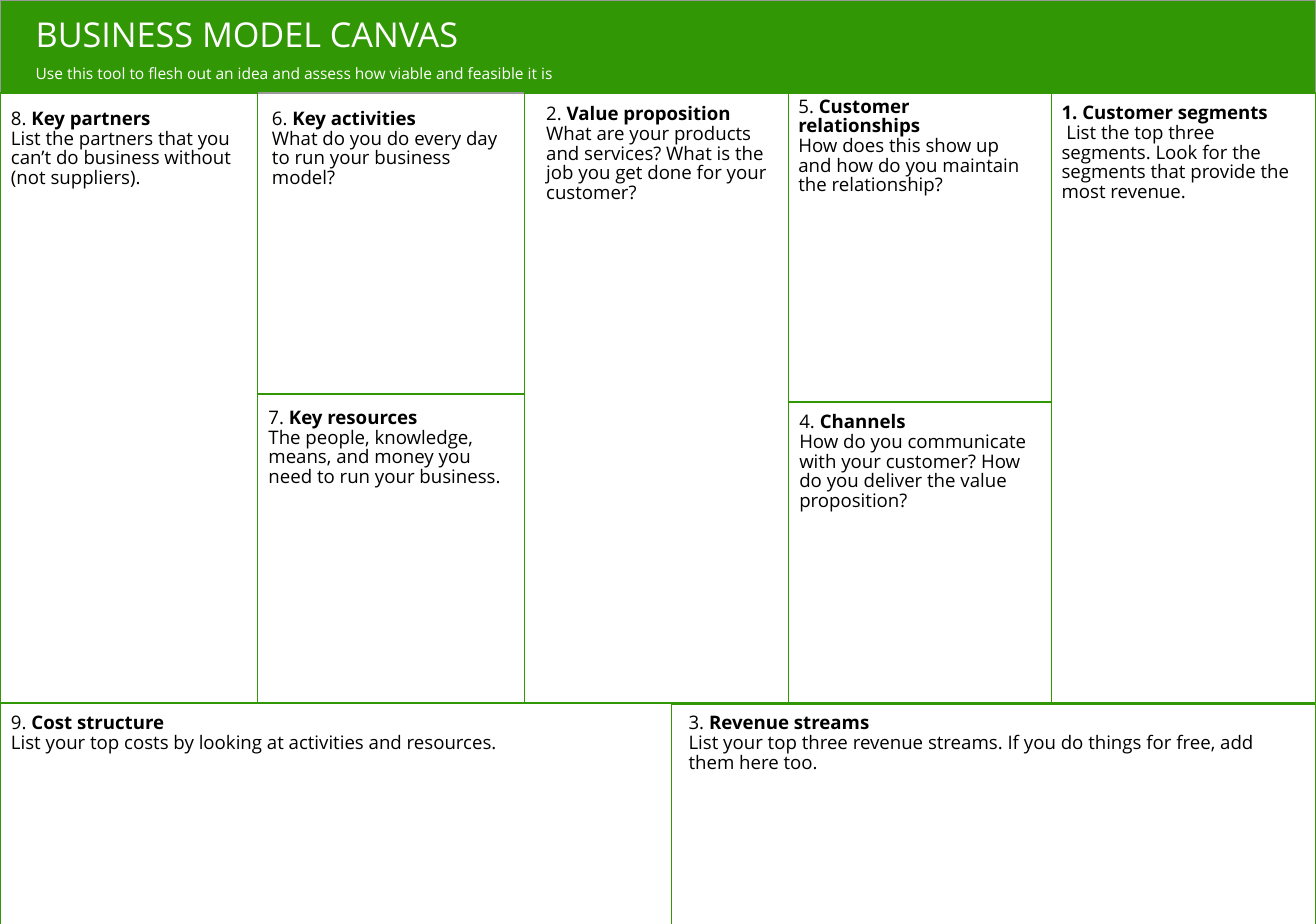
from pptx import Presentation
from pptx import util as u
from pptx.dml.color import RGBColor
from pptx.enum import shapes, text

GREEN, GREY, WHITE, BLACK = "319704", "999999", "FFFFFF", "000000"
WIDTH, HEIGHT = 29.85, 20.96
TOP, BASE, STREAMS_TOP = 2.11, 15.95, 15.98
PARTNERS, ACTIVITIES, VALUE, RELATIONS, SEGMENTS = 0, 5.84, 11.89, 17.88, 23.85
RESOURCES_TOP, CHANNELS_TOP = 8.94, 9.12
STREAMS, BOTTOM = 15.24, 20.98

CELLS = [
    (RELATIONS, CHANNELS_TOP, SEGMENTS, BASE),
    (RELATIONS, TOP, SEGMENTS, CHANNELS_TOP),
    (SEGMENTS, TOP, WIDTH, BASE),
    (PARTNERS, TOP, ACTIVITIES, BASE),
    (VALUE, TOP, RELATIONS, BASE),
    (PARTNERS, BASE, STREAMS, BOTTOM),
    (STREAMS, STREAMS_TOP, WIDTH, BOTTOM),
    (ACTIVITIES, RESOURCES_TOP, VALUE, BASE),
]

PROMPTS = [
    (23.83, 2.11, 5.97, "", "1. Customer segments",
     " List the top three segments. Look for the segments that provide the most revenue."),
    (12.14, 2.13, 5.84, "2. ", "Value proposition",
     "What are your products and services? What is the job you get done for your customer?"),
    (15.37, 15.95, 14.45, "3. ", "Revenue streams",
     "List your top three revenue streams. If you do things for free, add them here too."),
    (17.88, 9.12, 5.97, "4. ", "Channels",
     "How do you communicate with your customer? How do you deliver the value proposition?"),
    (17.86, 1.96, 5.84, "5. ", "Customer relationships",
     "How does this show up and how do you maintain the relationship?"),
    (5.92, 2.24, 5.97, "6. ", "Key activities",
     "What do you do every day to run your business model?"),
    (5.84, 9.02, 6.07, "7. ", "Key resources",
     "The people, knowledge, means, and money you need to run your business."),
    (0, 2.24, 5.84, "8. ", "Key partners",
     "List the partners that you can’t do business without (not suppliers)."),
    (0, 15.95, 15.24, "9. ", "Cost structure",
     "List your top costs by looking at activities and resources."),
]


def colour(value):
    return RGBColor.from_string(value)


class Canvas:
    """Draws the parts of a business model canvas on one page."""

    font = "Open Sans"

    def __init__(self, page):
        self.page = page

    def style(self, span, size, shade, bold=False):
        span.font.name = self.font
        span.font.size = u.Pt(size)
        span.font.bold = bold
        span.font.color.rgb = colour(shade)

    def outline(self, box, shade):
        box.line.color.rgb = colour(shade)
        box.line.width = u.Pt(0.75)

    def frame(self, box, side, top):
        frame = box.text_frame
        frame.word_wrap = True
        frame.auto_size = text.MSO_AUTO_SIZE.NONE
        frame.vertical_anchor = text.MSO_ANCHOR.TOP
        frame.margin_left = frame.margin_right = u.Cm(side)
        frame.margin_top = frame.margin_bottom = u.Cm(top)
        return frame

    def heading(self, box, words, size, place, side, top):
        box.left, box.top, box.width, box.height = map(u.Cm, place)
        frame = self.frame(box, side, top)
        frame.text = words
        para = frame.paragraphs[0]
        para.alignment = text.PP_ALIGN.LEFT
        para.space_before = u.Pt(0)
        self.style(para.runs[0], size, WHITE)

    def cell(self, left, top, right, bottom):
        box = self.page.shapes.add_shape(
            shapes.MSO_SHAPE.RECTANGLE,
            u.Cm(left), u.Cm(top), u.Cm(right - left), u.Cm(bottom - top))
        box.shadow.inherit = False
        box.fill.background()
        self.outline(box, GREEN)

    def prompt(self, left, top, width, number, name, question):
        box = self.page.shapes.add_textbox(u.Cm(left), u.Cm(top), u.Cm(width), u.Cm(2.5))
        frame = self.frame(box, 0.25, 0.25)
        for words in ((number, name), (question,)):
            para = frame.paragraphs[0] if len(words) == 2 else frame.add_paragraph()
            para.line_spacing = 0.88
            for part in filter(None, words):
                span = para.add_run()
                span.text = part
                self.style(span, 12, BLACK, part == name)


def main():
    deck = Presentation()
    deck.slide_width, deck.slide_height = u.Cm(WIDTH), u.Cm(HEIGHT)
    page = deck.slides.add_slide(deck.slide_layouts[0])
    canvas = Canvas(page)

    title, subtitle = page.placeholders
    canvas.heading(title, "BUSINESS MODEL CANVAS", 22, (0, 0, WIDTH, TOP), 0.81, 0.3)
    title.fill.solid()
    title.fill.fore_color.rgb = colour(GREEN)
    canvas.outline(title, GREY)
    canvas.heading(
        subtitle, "Use this tool to flesh out an idea and assess how viable and feasible it is",
        10, (0.81, 1.46, 16, 0.5), 0, 0)

    for cell in CELLS:
        canvas.cell(*cell)
    for prompt in PROMPTS:
        canvas.prompt(*prompt)
    deck.save("out.pptx")


if __name__ == "__main__":
    main()
